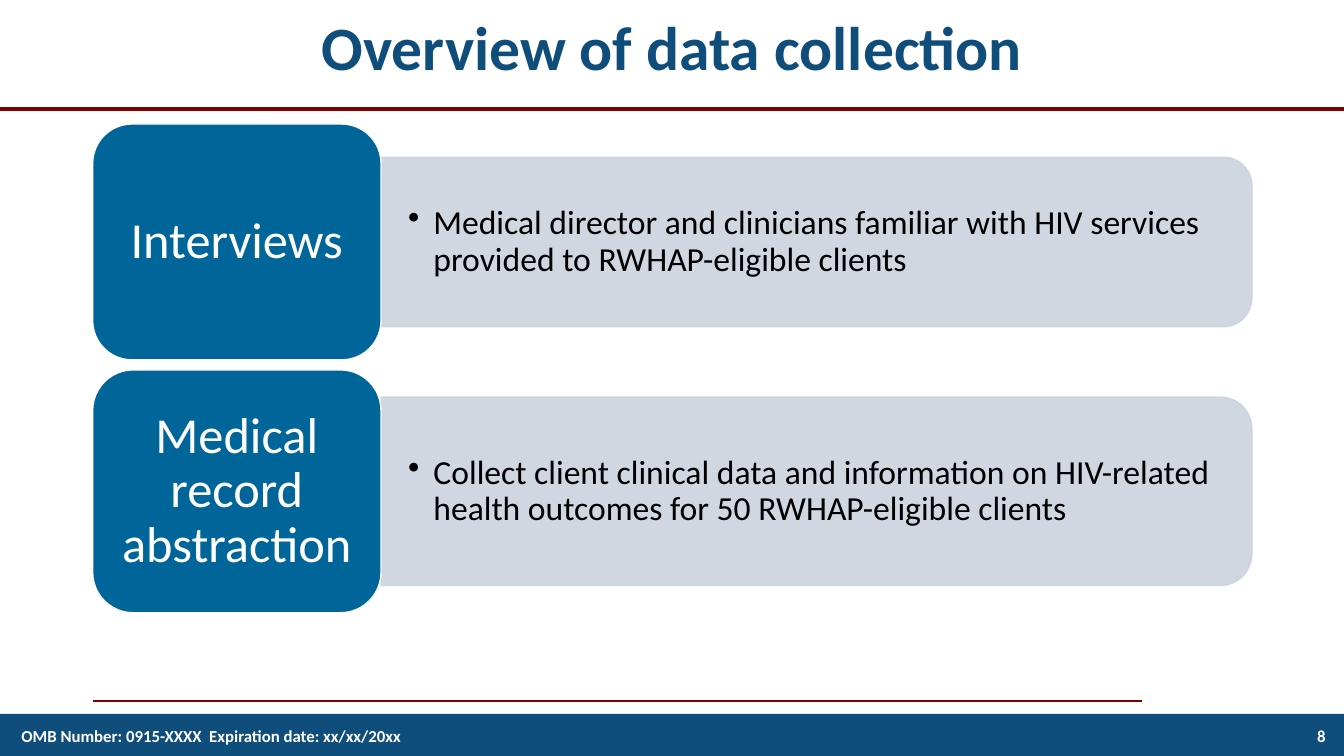
from lxml import etree
from pptx import Presentation
from pptx.dml.color import RGBColor
from pptx.enum import shapes, text
from pptx.oxml import ns
from pptx.util import Pt

COLORS = {"navy": "0F4D7B", "maroon": "800000", "tile": "006699",
          "bar": "CCD3DE", "white": "FFFFFF", "black": "000000"}
ALIGN = text.PP_ALIGN


def rgb(name):
    return RGBColor.from_string(COLORS[name])


def write(sp, words, size, color, bold=False, align=ALIGN.LEFT,
          spacing=1.0, insets=(7.2, 3.6), bullet=False):
    """Fill a shape with one vertically centred paragraph."""
    tf = sp.text_frame
    tf.word_wrap = True
    tf.vertical_anchor = text.MSO_ANCHOR.MIDDLE
    tf.margin_left = tf.margin_right = Pt(insets[0])
    tf.margin_top = tf.margin_bottom = Pt(insets[1])
    p = tf.paragraphs[0]
    p.text = words
    p.alignment = align
    p.line_spacing = spacing
    if bullet:
        pPr = p._p.get_or_add_pPr()
        pPr.set("marL", str(Pt(18)))
        pPr.set("indent", str(-Pt(18)))
        etree.SubElement(pPr, ns.qn("a:buChar"), char="•")
    for r in p.runs:
        r.font.name = "Calibri"
        r.font.size = Pt(size)
        r.font.bold = bold
        r.font.color.rgb = rgb(color)


prs = Presentation()
prs.slide_width, prs.slide_height = Pt(960), Pt(540)
s = prs.slides.add_slide(prs.slide_layouts[6])

# Rules and footer band
for left, right, y, weight in [(66.2, 815.8, 500.4, 1.5), (0, 960, 77.8, 3)]:
    rule = s.shapes.add_connector(shapes.MSO_CONNECTOR.STRAIGHT,
                                  Pt(left), Pt(y), Pt(right), Pt(y))
    rule.line.color.rgb = rgb("maroon")
    rule.line.width = Pt(weight)
    etree.SubElement(rule._element.spPr, ns.qn("a:effectLst"))

band = s.shapes.add_shape(shapes.MSO_SHAPE.RECTANGLE, 0, Pt(510), Pt(960), Pt(30))
band.shadow.inherit = False
band.fill.solid()
band.fill.fore_color.rgb = rgb("navy")
band.line.fill.background()

title = s.shapes.add_textbox(Pt(66.2), Pt(-15.8), Pt(828), Pt(104.4))
write(title, "Overview of data collection", 44, "navy", bold=True,
      align=ALIGN.CENTER, spacing=0.9)

# Each row: tile label, tile top and height, bar height, bar text
rows = [
    ("Interviews", 88.6, 168.5, 121,
     "Medical director and clinicians familiar with HIV services "
     "provided to RWHAP-eligible clients"),
    ("Medical record\vabstraction", 264.2, 173.5, 134.6,
     "Collect client clinical data and information on HIV-related "
     "health outcomes for 50 RWHAP-eligible clients"),
]
tile_left, tile_width, bar_width = 66.2, 206, 622
bar_left = tile_left + tile_width

for label, top, height, bar_height, detail in rows:
    middle = top + height / 2
    # The bar is drawn upright and turned, so its round corners face right
    bar = s.shapes.add_shape(
        shapes.MSO_SHAPE.ROUND_2_SAME_RECTANGLE,
        Pt(bar_left + (bar_width - bar_height) / 2), Pt(middle - bar_width / 2),
        Pt(bar_height), Pt(bar_width))
    bar.rotation = 90
    bar.shadow.inherit = False
    bar.fill.solid()
    bar.fill.fore_color.rgb = rgb("bar")
    bar.line.color.rgb = rgb("bar")
    bar.line.width = Pt(1)
    for color in bar._element.spPr.iter(ns.qn("a:srgbClr")):
        etree.SubElement(color, ns.qn("a:alpha"), val="90000")

    box = s.shapes.add_textbox(Pt(bar_left), Pt(middle - bar_height / 2),
                               Pt(616), Pt(bar_height))
    write(box, detail, 24, "black", spacing=0.9, insets=(19.4, 10), bullet=True)

    tile = s.shapes.add_shape(shapes.MSO_SHAPE.ROUNDED_RECTANGLE, Pt(tile_left),
                              Pt(top), Pt(tile_width), Pt(height))
    tile.shadow.inherit = False
    tile.fill.solid()
    tile.fill.fore_color.rgb = rgb("tile")
    tile.line.color.rgb = rgb("white")
    tile.line.width = Pt(1)
    write(tile, label, 36, "white", align=ALIGN.CENTER, spacing=0.9,
          insets=(10.8, 5))

# Footer
for words, left, width in [
        ("8", 738, 216),
        ("OMB Number: 0915-XXXX  Expiration date: xx/xx/20xx", 0, 293.8)]:
    box = s.shapes.add_textbox(Pt(left), Pt(511.2), Pt(width), Pt(28.8))
    write(box, words, 12, "white", bold=True, align=ALIGN.RIGHT)

prs.save("out.pptx")
